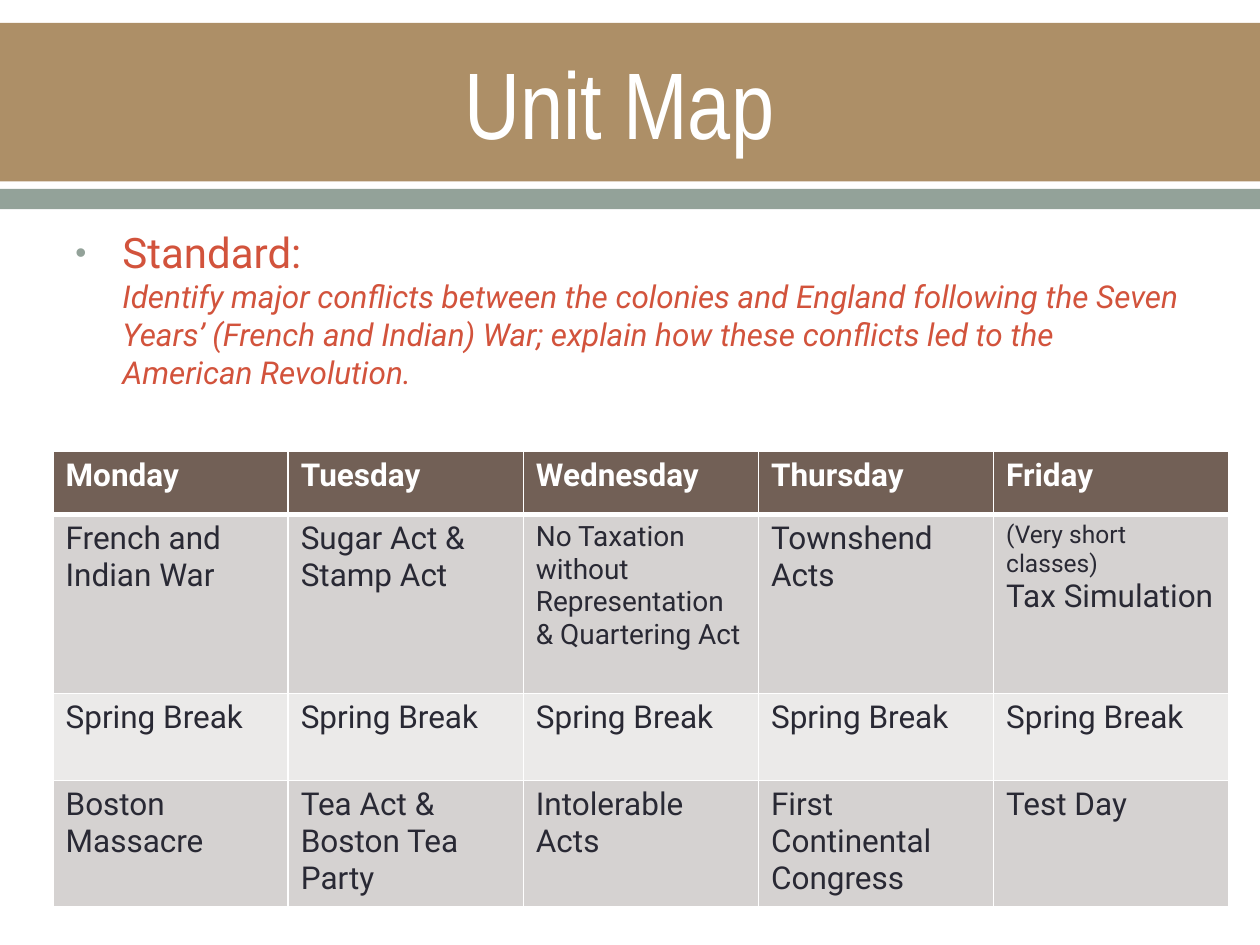
from lxml import etree
from pptx import Presentation
from pptx.dml.color import RGBColor
from pptx.enum.shapes import MSO_SHAPE
from pptx.enum.text import MSO_ANCHOR, PP_ALIGN
from pptx.oxml.ns import qn
from pptx.util import Cm, Pt

RECT = MSO_SHAPE.RECTANGLE
MIDDLE = MSO_ANCHOR.MIDDLE
CENTER = PP_ALIGN.CENTER

TITLE = "Unit Map "
STANDARD = (
    "Standard:",
    "Identify major conflicts between the colonies and England following the Seven "
    "Years’ (French and Indian) War; explain how these conflicts led to the "
    "American Revolution.",
)
DAYS = ["Monday", "Tuesday", "Wednesday", "Thursday", "Friday"]
WEEKS = [
    ["French and Indian War", "Sugar Act & Stamp Act",
     [("No Taxation without Representation & Quartering Act", 16)],
     "Townshend Acts", [("(Very short classes)", 14), ("Tax Simulation", 18)]],
    ["Spring Break"] * len(DAYS),
    ["Boston Massacre", "Tea Act & Boston Tea Party", "Intolerable Acts",
     "First Continental Congress", "Test Day"],
]

THEME = {
    "title_font": "Arial Narrow", "font": "Roboto",
    "title_size": 54, "lead_size": 24, "size": 18,
    "white": "FFFFFF", "tan": "AD8F67", "sage": "93A299", "red": "D2533C",
    "ink": "292934", "header": "726056", "bands": ["D5D2D1", "EBEAE9"],
}
BANNERS = [("tan", 0.46, 3.2), ("sage", 3.81, 0.41)]
TABLE_BOX = (1.07, 9.1, 23.7)
ROW_HEIGHTS = [1.27, 3.61, 1.75, 2.46]


def rgb(name):
    return RGBColor.from_string(THEME.get(name, name))


def style(r, size, color, font="font", bold=False, italic=False):
    r.font.name = THEME[font]
    r.font.size = Pt(size)
    r.font.color.rgb = rgb(color)
    r.font.bold = bold
    r.font.italic = italic


def add_text(s, left, top, width, height):
    tf = s.shapes.add_textbox(Cm(left), Cm(top), Cm(width), Cm(height)).text_frame
    tf.word_wrap = True
    return tf


def add_bullet(p, indent):
    pPr = p._p.get_or_add_pPr()
    pPr.set("marL", str(Cm(indent)))
    pPr.set("indent", str(-Cm(indent)))
    color = etree.SubElement(pPr, qn("a:buClr"))
    etree.SubElement(color, qn("a:srgbClr"), val=THEME["sage"])
    etree.SubElement(pPr, qn("a:buSzPct"), val="75000")
    etree.SubElement(pPr, qn("a:buFont"), typeface="Arial")
    etree.SubElement(pPr, qn("a:buChar"), char="•")


def add_borders(cell, top, bottom):
    tcPr = cell._tc.get_or_add_tcPr()
    sides = [("lnL", 1), ("lnR", 1), ("lnT", top), ("lnB", bottom)]
    for i, (side, width) in enumerate(sides):
        ln = etree.Element(qn(f"a:{side}"), w=str(Pt(width)))
        fill = etree.SubElement(ln, qn("a:solidFill"))
        etree.SubElement(fill, qn("a:srgbClr"), val=THEME["white"])
        tcPr.insert(i, ln)


def add_banners(s, width):
    for color, top, height in BANNERS:
        sp = s.shapes.add_shape(RECT, 0, Cm(top), width, Cm(height))
        sp.shadow.inherit = False
        sp.fill.solid()
        sp.fill.fore_color.rgb = rgb(color)
        sp.line.fill.background()


def add_title(s):
    tf = add_text(s, 1.27, 0.51, 22.86, 3.1)
    tf.vertical_anchor = MIDDLE
    p = tf.paragraphs[0]
    p.text = TITLE
    p.alignment = CENTER
    style(p.runs[0], THEME["title_size"], "white", "title_font")


def add_standard(s):
    p = add_text(s, 1.27, 4.45, 22.86, 4.2).paragraphs[0]
    p.text = "\v".join(STANDARD)
    p.space_before = Pt(4.8)
    add_bullet(p, 0.95)
    lead, detail = p.runs
    style(lead, THEME["lead_size"], "red")
    style(detail, THEME["size"], "red", italic=True)


def fill_cell(cell, content, row):
    header = row == 0
    cell.fill.solid()
    cell.fill.fore_color.rgb = rgb("header" if header else THEME["bands"][(row - 1) % 2])
    add_borders(cell, 3 if row == 1 else 1, 3 if header else 1)
    lines = [(content, THEME["size"])] if isinstance(content, str) else content
    tf = cell.text_frame
    tf.text = "\n".join(text for text, size in lines)
    for p, (text, size) in zip(tf.paragraphs, lines):
        style(p.runs[0], size, "white" if header else "ink", bold=header)


def add_calendar(s):
    left, top, width = TABLE_BOX
    rows = [DAYS] + WEEKS
    table = s.shapes.add_table(len(rows), len(DAYS), Cm(left), Cm(top),
                               Cm(width), Cm(sum(ROW_HEIGHTS))).table
    for column in table.columns:
        column.width = Cm(width / len(DAYS))
    for i, (height, contents) in enumerate(zip(ROW_HEIGHTS, rows)):
        table.rows[i].height = Cm(height)
        for j, content in enumerate(contents):
            fill_cell(table.cell(i, j), content, i)


def main():
    prs = Presentation()
    prs.slide_width, prs.slide_height = Cm(25.4), Cm(19.05)
    s = prs.slides.add_slide(prs.slide_layouts[6])
    add_banners(s, prs.slide_width)
    add_title(s)
    add_standard(s)
    add_calendar(s)
    prs.save("out.pptx")


if __name__ == "__main__":
    main()
